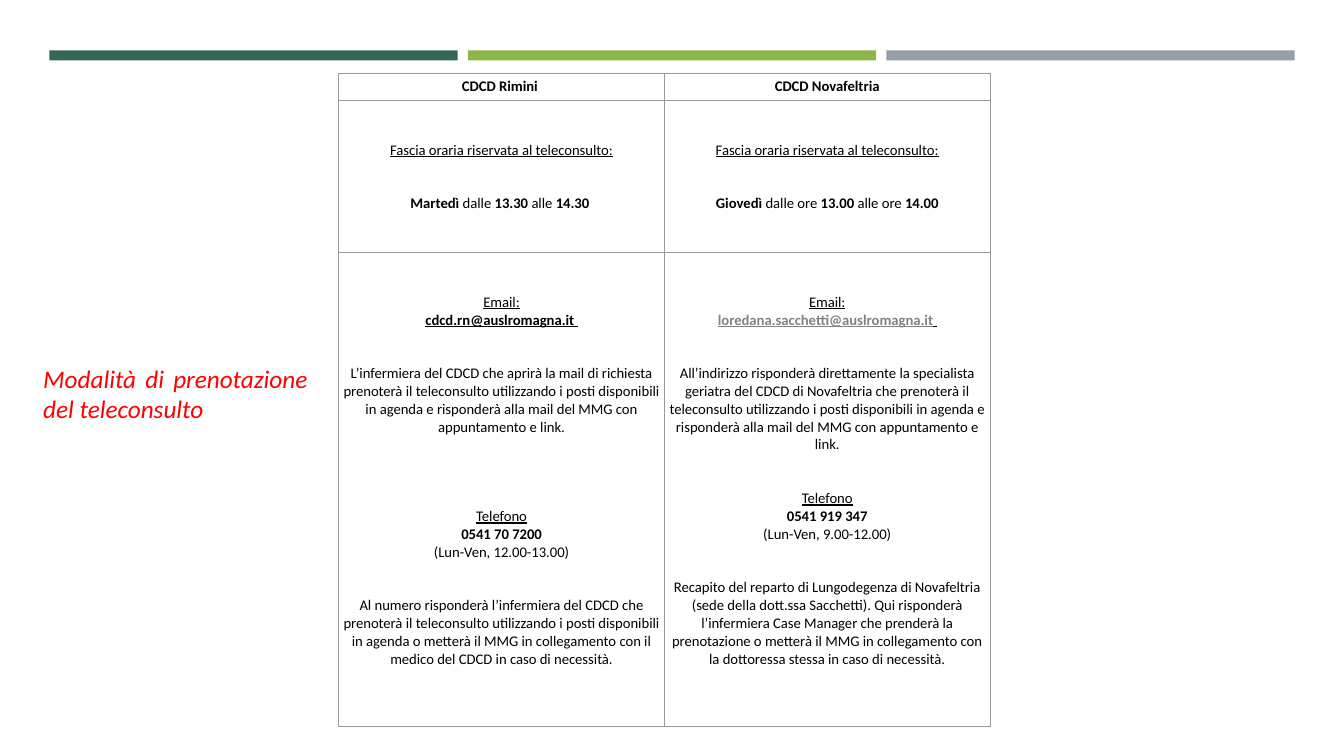
from dataclasses import dataclass

from lxml import etree
from pptx import Presentation
from pptx.dml.color import RGBColor
from pptx.enum import shapes, text
from pptx.oxml.ns import qn
from pptx.util import Inches, Pt


@dataclass(frozen=True)
class Theme:
    font: str = "Calibri"
    title_size: float = 18
    body_size: float = 10.5
    line: float = 12.8  # height of one body line, in points
    title: str = "FF0000"
    ink: str = "000000"
    muted: str = "828282"
    border: str = "999999"
    bars: tuple = ("366658", "8CB64A", "969FA7")


class Deck:
    def __init__(self, theme):
        self.theme = theme
        self.prs = Presentation()
        self.prs.slide_width, self.prs.slide_height = Inches(13.33), Inches(7.5)
        self.s = self.prs.slides.add_slide(self.prs.slide_layouts[6])

    def run(self, p, words, size, color, bold=False, underline=False, italic=False):
        r = p.add_run()
        r.text = words
        f = r.font
        f.name, f.size = self.theme.font, Pt(size)
        f.bold, f.underline, f.italic = bold, underline, italic
        f.color.rgb = RGBColor.from_string(color)

    def bar(self, x, y, w, h, color):
        sp = self.s.shapes.add_shape(shapes.MSO_SHAPE.RECTANGLE,
                                     Inches(x), Inches(y), Inches(w), Inches(h))
        sp.shadow.inherit = False
        sp.fill.solid()
        sp.fill.fore_color.rgb = RGBColor.from_string(color)
        sp.line.fill.background()

    def title(self, x, y, w, h, words):
        tf = self.s.shapes.add_textbox(Inches(x), Inches(y), Inches(w), Inches(h)).text_frame
        tf.word_wrap = True
        tf.auto_size = text.MSO_AUTO_SIZE.SHAPE_TO_FIT_TEXT
        p = tf.paragraphs[0]
        p.alignment = text.PP_ALIGN.JUSTIFY
        self.run(p, words, self.theme.title_size, self.theme.title, italic=True)

    def borders(self, cell):
        tc_pr = cell._tc.get_or_add_tcPr()
        for side in ("a:lnL", "a:lnR", "a:lnT", "a:lnB"):
            ln = etree.SubElement(tc_pr, qn(side), w=str(Pt(0.75)))
            fill = etree.SubElement(ln, qn("a:solidFill"))
            etree.SubElement(fill, qn("a:srgbClr"), val=self.theme.border)

    def cell(self, cell, paragraphs, top, anchor):
        self.borders(cell)
        cell.fill.background()
        cell.margin_left = cell.margin_right = cell.margin_bottom = Inches(0.04)
        cell.margin_top = Inches(top)
        cell.vertical_anchor = anchor
        tf = cell.text_frame
        for i, (gap, runs) in enumerate(paragraphs):
            p = tf.add_paragraph() if i else tf.paragraphs[0]
            p.alignment = text.PP_ALIGN.CENTER
            if gap:
                p.space_before = Pt(gap * self.theme.line)
            for words, style in runs:
                color = self.theme.muted if "m" in style else self.theme.ink
                self.run(p, words, self.theme.body_size, color, "b" in style, "u" in style)

    def table(self, x, y, widths, heights, rows, tops, anchors):
        tbl = self.s.shapes.add_table(len(heights), len(widths), Inches(x), Inches(y),
                                      Inches(sum(widths)), Inches(sum(heights))).table
        tbl.first_row = tbl.horz_banding = False
        for col, w in zip(tbl.columns, widths):
            col.width = Inches(w)
        for i, h in enumerate(heights):
            tbl.rows[i].height = Inches(h)
            for j, paragraphs in enumerate(rows[i]):
                self.cell(tbl.cell(i, j), paragraphs, tops[i], anchors[i])


# Text styles: b bold, u underlined, m muted; a paragraph is (lines of space before, runs)
def hours(*runs):
    return [(0, [("Fascia oraria riservata al teleconsulto:", "u")]), (2, runs)]


def contacts(email, reply, phone_gap, phone, times, answer):
    return [
        (0, [("Email:", "u")]),
        (0, email),
        (2, [(reply, "")]),
        (phone_gap, [("Telefono", "u")]),
        (0, [(phone, "b")]),
        (0, [(times, "")]),
        (2, [(answer, "")]),
    ]


HEADERS = [[(0, [(name, "b")])] for name in ("CDCD Rimini ", "CDCD Novafeltria")]
HOURS = [
    hours(("Martedì ", "b"), ("dalle", ""), (" 13.30 ", "b"), ("alle", ""), (" 14.30 ", "b")),
    hours(("Giovedì ", "b"), ("dalle ore", ""), (" 13.00 ", "b"), ("alle ore", ""),
          (" 14.00", "b")),
]
CONTACTS = [
    contacts(
        [("cdcd.rn@auslromagna.it ", "bu")],
        "L’infermiera del CDCD che aprirà la mail di richiesta prenoterà il teleconsulto "
        "utilizzando i posti disponibili in agenda e risponderà alla mail del MMG con "
        "appuntamento e link.",
        4, "0541 70 7200", "(Lun-Ven, 12.00-13.00)",
        "Al numero risponderà l’infermiera del CDCD che prenoterà il teleconsulto "
        "utilizzando i posti disponibili in agenda o metterà il MMG in collegamento con il "
        "medico del CDCD in caso di necessità."),
    contacts(
        [("loredana.sacchetti@auslromagna.it", "bum"), (" ", "bu")],
        "All’indirizzo risponderà direttamente la specialista geriatra del CDCD di "
        "Novafeltria che prenoterà il teleconsulto utilizzando i posti disponibili in agenda "
        "e risponderà alla mail del MMG con appuntamento e link.",
        2, "0541 919 347", "(Lun-Ven, 9.00-12.00)",
        "Recapito del reparto di Lungodegenza di Novafeltria (sede della dott.ssa "
        "Sacchetti). Qui risponderà l’infermiera Case Manager che prenderà la prenotazione o "
        "metterà il MMG in collegamento con la dottoressa stessa in caso di necessità."),
]


def main():
    deck = Deck(Theme())

    # Coloured bars along the top
    for i, color in enumerate(deck.theme.bars):
        deck.bar(0.49 + 4.15 * i, 0.5, 4.05, 0.1, color)

    # Booking table
    top, middle = text.MSO_ANCHOR.TOP, text.MSO_ANCHOR.MIDDLE
    deck.table(3.36, 0.73, [3.23, 3.23], [0.27, 1.51, 4.7],
               [HEADERS, HOURS, CONTACTS], [0.04, 0.04, 0.4], [top, middle, top])

    # Side title
    deck.title(0.33, 3.55, 2.82, 0.71, "Modalità di prenotazione del teleconsulto")

    deck.prs.save("out.pptx")


if __name__ == "__main__":
    main()
